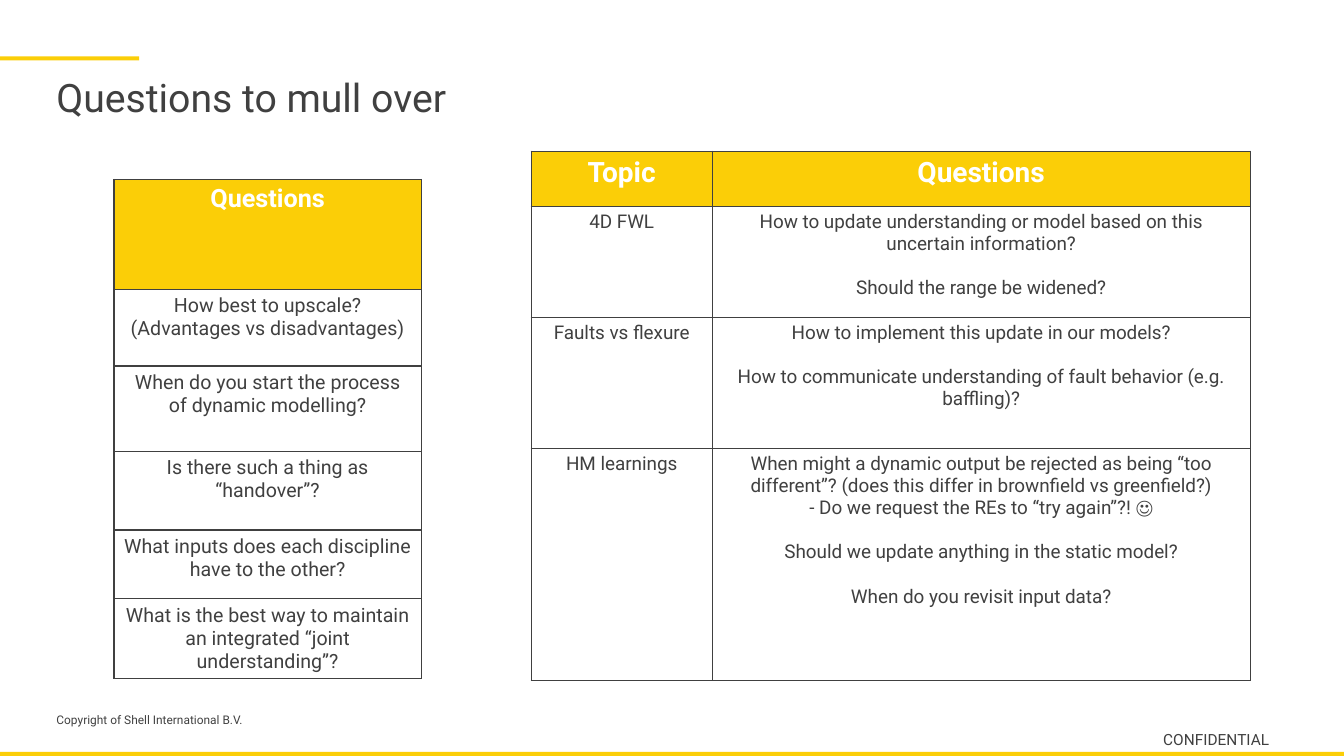
from dataclasses import dataclass

from lxml.etree import SubElement
from pptx import Presentation
from pptx.dml.color import RGBColor
from pptx.enum.shapes import MSO_SHAPE
from pptx.enum.text import MSO_ANCHOR, MSO_AUTO_SIZE, PP_ALIGN
from pptx.oxml.ns import qn
from pptx.slide import Slide
from pptx.table import _Cell
from pptx.text.text import TextFrame, _Paragraph
from pptx.util import Pt


@dataclass(frozen=True)
class Theme:
    font: str = "Roboto"
    yellow: str = "FBCE07"
    ink: str = "404040"
    white: str = "FFFFFF"
    title: float = 28
    footnote: float = 8.5
    label: float = 11
    border: float = 1


@dataclass(frozen=True)
class Box:
    left: float
    top: float
    width: float
    height: float


@dataclass(frozen=True)
class Para:
    text: str
    gap: float = 0


@dataclass(frozen=True)
class Label:
    text: str
    box: Box
    size: float
    spacing: float


@dataclass(frozen=True)
class Grid:
    left: float
    top: float
    columns: list[float]
    heights: list[float]
    head_size: float
    body_size: float
    body_fill: str | None
    rows: list[list[list[Para]]]


THEME = Theme()
GAP = 15.8

BARS = [Box(0, 40.3, 99.4, 2.9), Box(0, 537.1, 960, 2.9)]

LABELS = [
    Label("Copyright of Shell International B.V.", Box(40.3, 509, 264, 18.7), THEME.footnote, 1),
    Label("CONFIDENTIAL", Box(830.9, 516.2, 81.4, 16.6), THEME.label, 1.4),
]

GRIDS = [
    Grid(81.4, 128.2, [219.6], [78.5, 54.8, 61, 56.1, 49.1, 43.2], 18, 14, THEME.white, [
        [[Para("Questions")]],
        [[Para("How best to upscale?"), Para("(Advantages vs disadvantages)")]],
        [[Para("When do you start the process of dynamic modelling?")]],
        [[Para("Is there such a thing as “handover”?")]],
        [[Para("What inputs does each discipline have to the other?")]],
        [[Para("What is the best way to maintain an integrated “joint understanding”?")]],
    ]),
    Grid(379.4, 108, [129.4, 384.2], [39.4, 79.2, 93.6, 166.1], 20, 13.5, None, [
        [[Para("Topic")], [Para("Questions")]],
        [[Para("4D FWL")], [
            Para("How to update understanding or model based on this uncertain information?"),
            Para("Should the range be widened?", GAP),
        ]],
        [[Para("Faults vs flexure")], [
            Para("How to implement this update in our models?"),
            Para("How to communicate understanding of fault behavior (e.g. baffling)?", GAP),
        ]],
        [[Para("HM learnings")], [
            Para("When might a dynamic output be rejected as being “too different”? "
                 "(does this differ in brownfield vs greenfield?)"),
            Para("- Do we request the REs to “try again”?! ☺"),
            Para("Should we update anything in the static model?", GAP),
            Para("When do you revisit input data?", GAP),
        ]],
    ]),
]


def points(box: Box) -> tuple[Pt, Pt, Pt, Pt]:
    return Pt(box.left), Pt(box.top), Pt(box.width), Pt(box.height)


def set_font(p: _Paragraph, size: float, color: str = THEME.ink, bold: bool = False) -> None:
    p.font.name = THEME.font
    p.font.size = Pt(size)
    p.font.bold = bold
    p.font.color.rgb = RGBColor.from_string(color)


def write_line(tf: TextFrame, text: str, size: float, spacing: float) -> None:
    """Fill a frame with one paragraph, without insets, at the top."""
    tf.margin_left = tf.margin_right = tf.margin_top = tf.margin_bottom = 0
    tf.word_wrap = True
    tf.auto_size = MSO_AUTO_SIZE.NONE
    tf.vertical_anchor = MSO_ANCHOR.TOP
    p = tf.paragraphs[0]
    p.text = text
    p.alignment = PP_ALIGN.LEFT
    p.line_spacing = spacing
    set_font(p, size)


def add_bar(s: Slide, box: Box) -> None:
    sp = s.shapes.add_shape(MSO_SHAPE.RECTANGLE, *points(box))
    sp.shadow.inherit = False
    sp.fill.solid()
    sp.fill.fore_color.rgb = RGBColor.from_string(THEME.yellow)
    sp.line.fill.background()


def add_title(s: Slide, text: str, box: Box) -> None:
    sp = s.shapes.title
    sp.left, sp.top, sp.width, sp.height = points(box)
    write_line(sp.text_frame, text, THEME.title, 0.9)


def add_label(s: Slide, label: Label) -> None:
    sp = s.shapes.add_textbox(*points(label.box))
    write_line(sp.text_frame, label.text, label.size, label.spacing)


def add_borders(cell: _Cell) -> None:
    tc_pr = cell._tc.get_or_add_tcPr()
    for side in ("lnL", "lnR", "lnT", "lnB"):
        ln = SubElement(tc_pr, qn(f"a:{side}"), w=str(Pt(THEME.border)))
        SubElement(SubElement(ln, qn("a:solidFill")), qn("a:srgbClr"), val=THEME.ink)


def fill_cell(cell: _Cell, paras: list[Para], size: float, color: str,
              fill: str | None, bold: bool) -> None:
    add_borders(cell)
    if fill:
        cell.fill.solid()
        cell.fill.fore_color.rgb = RGBColor.from_string(fill)
    else:
        cell.fill.background()
    tf = cell.text_frame
    for i, para in enumerate(paras):
        p = tf.add_paragraph() if i else tf.paragraphs[0]
        p.text = para.text
        p.alignment = PP_ALIGN.CENTER
        if para.gap:
            p.space_before = Pt(para.gap)
        set_font(p, size, color, bold)


def add_grid(s: Slide, grid: Grid) -> None:
    box = Box(grid.left, grid.top, sum(grid.columns), sum(grid.heights))
    table = s.shapes.add_table(len(grid.heights), len(grid.columns), *points(box)).table
    table.horz_banding = False
    table.first_row = False
    for column, width in zip(table.columns, grid.columns):
        column.width = Pt(width)
    for i, (row, height) in enumerate(zip(table.rows, grid.heights)):
        row.height = Pt(height)
        for cell, paras in zip(row.cells, grid.rows[i]):
            if i == 0:
                fill_cell(cell, paras, grid.head_size, THEME.white, THEME.yellow, True)
            else:
                fill_cell(cell, paras, grid.body_size, THEME.ink, grid.body_fill, False)


def main() -> None:
    prs = Presentation()
    prs.slide_width, prs.slide_height = Pt(960), Pt(540)
    s = prs.slides.add_slide(prs.slide_layouts[5])
    for bar in BARS:
        add_bar(s, bar)
    add_title(s, "Questions to mull over", Box(40.3, 56.2, 879.8, 63.4))
    for grid in GRIDS:
        add_grid(s, grid)
    for label in LABELS:
        add_label(s, label)
    prs.save("out.pptx")


if __name__ == "__main__":
    main()
